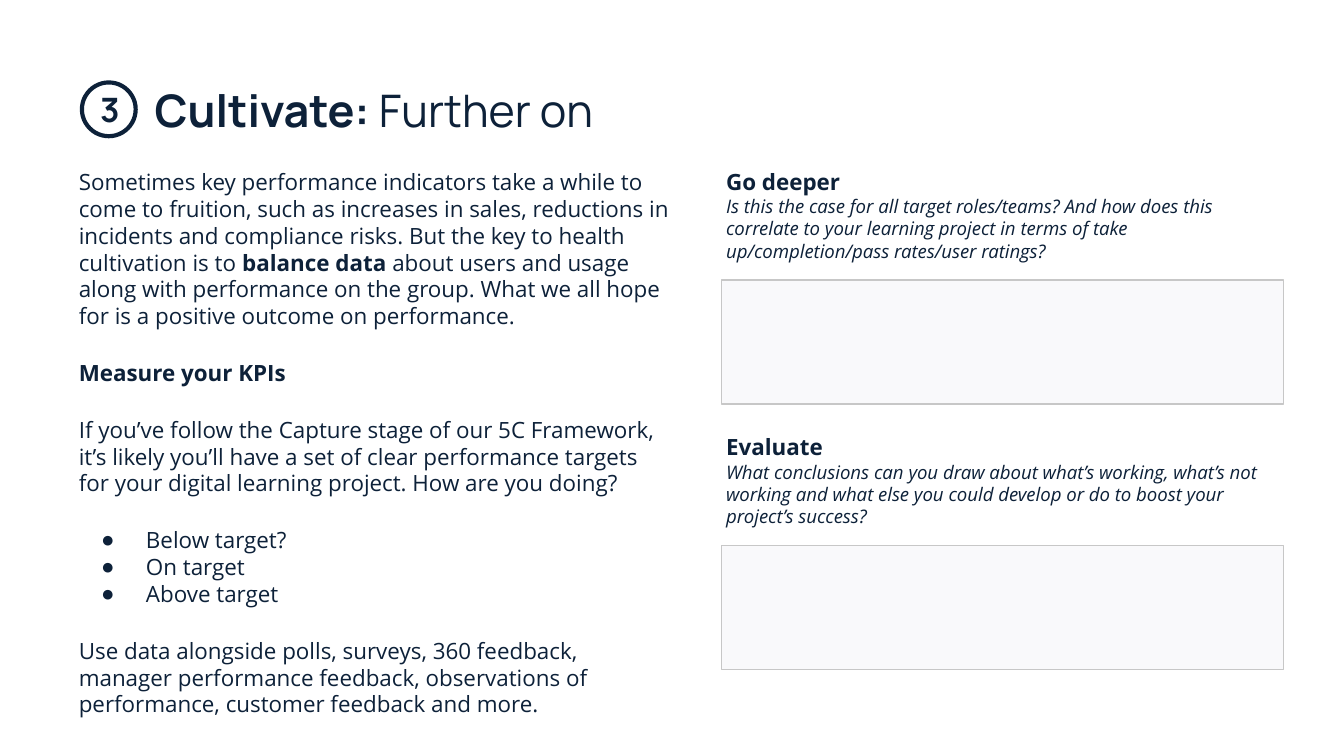
from dataclasses import dataclass

from lxml import etree
from pptx import Presentation
from pptx.dml.color import RGBColor
from pptx.enum.shapes import MSO_SHAPE
from pptx.enum.text import MSO_ANCHOR, MSO_AUTO_SIZE, PP_ALIGN
from pptx.oxml.ns import qn
from pptx.util import Pt

NAVY = RGBColor(0x0D, 0x21, 0x39)
PALE = RGBColor(0xF9, 0xF9, 0xFB)
GREY = RGBColor(0xC7, 0xC7, 0xC7)
LEFT, CENTER = PP_ALIGN.LEFT, PP_ALIGN.CENTER
TOP = MSO_ANCHOR.TOP
NO_AUTOFIT = MSO_AUTO_SIZE.NONE
OVAL, RECTANGLE = MSO_SHAPE.OVAL, MSO_SHAPE.RECTANGLE
HEADING_FONT, BODY_FONT, BULLET_FONT = "Manrope", "Open Sans", "Arial"
BULLET_MARGIN, BULLET_HANG = Pt(36), Pt(24)


@dataclass(frozen=True)
class Box:
    left: float
    top: float
    width: float
    height: float


@dataclass(frozen=True)
class Run:
    text: str
    bold: bool = False
    italic: bool = False
    size: float | None = None
    break_after: bool = False


@dataclass(frozen=True)
class Paragraph:
    runs: tuple[Run, ...]
    before: float = 0
    after: float = 0
    bullet: bool = False


@dataclass(frozen=True)
class Prompt:
    top: float
    heading: str
    question: str


BODY = (
    Paragraph((
        Run("Sometimes key performance indicators take a while to come to fruition, "
            "such as increases in sales, reductions in incidents and compliance risks. "
            "But the key to health cultivation is to "),
        Run("balance data", bold=True),
        Run(" about users and usage along with performance on the group. "
            "What we all hope for is a positive outcome on performance."),
    )),
    Paragraph((Run("Measure your KPIs", bold=True),), before=16),
    Paragraph((Run("If you’ve follow the Capture stage of our 5C Framework, it’s likely "
                   "you’ll have a set of clear performance targets for your digital "
                   "learning project. How are you doing?"),), before=16),
    Paragraph((Run("Below target?"),), before=16, bullet=True),
    Paragraph((Run("On target"),), bullet=True),
    Paragraph((Run("Above target"),), bullet=True),
    Paragraph((Run("Use data alongside polls, surveys, 360 feedback, manager performance "
                   "feedback, observations of performance, customer feedback and more."),),
              before=16, after=16),
)

PROMPTS = (
    Prompt(82.8, "Go deeper",
           "Is this the case for all target roles/teams? And how does this correlate to "
           "your learning project in terms of take up/completion/pass rates/user ratings?"),
    Prompt(225, "Evaluate",
           "What conclusions can you draw about what’s working, what’s not working and "
           "what else you could develop or do to boost your project’s success?"),
)


def place(shape, box: Box) -> None:
    shape.left, shape.top = Pt(box.left), Pt(box.top)
    shape.width, shape.height = Pt(box.width), Pt(box.height)


def set_bullet(paragraph, bullet: bool) -> None:
    properties = paragraph._p.get_or_add_pPr()
    properties.set("marL", str(BULLET_MARGIN if bullet else 0))
    properties.set("indent", str(-BULLET_HANG if bullet else 0))
    if not bullet:
        etree.SubElement(properties, qn("a:buNone"))
        return
    color = etree.SubElement(properties, qn("a:buClr"))
    etree.SubElement(color, qn("a:srgbClr"), val=str(NAVY))
    etree.SubElement(properties, qn("a:buFont"), typeface=BULLET_FONT)
    etree.SubElement(properties, qn("a:buChar"), char="●")


def write_text(shape, paragraphs: tuple[Paragraph, ...], *, font: str, size: float,
               align=LEFT) -> None:
    frame = shape.text_frame
    frame.word_wrap = True
    frame.auto_size = NO_AUTOFIT
    frame.vertical_anchor = TOP
    frame.margin_left = frame.margin_right = Pt(7.2)
    frame.margin_top = frame.margin_bottom = Pt(7.2)
    for index, content in enumerate(paragraphs):
        paragraph = frame.add_paragraph() if index else frame.paragraphs[0]
        set_bullet(paragraph, content.bullet)
        paragraph.alignment = align
        paragraph.line_spacing = 1.0
        paragraph.space_before = Pt(content.before)
        paragraph.space_after = Pt(content.after)
        for part in content.runs:
            run = paragraph.add_run()
            run.text = part.text
            run.font.name = font
            run.font.size = Pt(part.size or size)
            run.font.bold = part.bold
            run.font.italic = part.italic
            run.font.color.rgb = NAVY
            if part.break_after:
                paragraph.add_line_break()


def add_text_box(slide, box: Box):
    return slide.shapes.add_textbox(Pt(box.left), Pt(box.top), Pt(box.width), Pt(box.height))


def add_outline(slide, kind, box: Box, line: RGBColor, weight: float,
                fill: RGBColor | None = None) -> None:
    shape = slide.shapes.add_shape(kind, Pt(box.left), Pt(box.top),
                                   Pt(box.width), Pt(box.height))
    shape.shadow.inherit = False
    shape.line.color.rgb = line
    shape.line.width = Pt(weight)
    if fill is None:
        shape.fill.background()
    else:
        shape.fill.solid()
        shape.fill.fore_color.rgb = fill


def add_prompt(slide, prompt: Prompt) -> None:
    label = add_text_box(slide, Box(381.9, prompt.top, 315.4, 66.2))
    runs = (Run(prompt.heading, bold=True, break_after=True),
            Run(prompt.question, italic=True, size=10))
    write_text(label, (Paragraph(runs),), font=BODY_FONT, size=12)
    add_outline(slide, RECTANGLE, Box(386.6, prompt.top + 67.2, 301, 66.4), GREY, 0.75, PALE)


def main() -> None:
    presentation = Presentation()
    presentation.slide_width, presentation.slide_height = Pt(720), Pt(405)
    slide = presentation.slides.add_slide(presentation.slide_layouts[1])

    title = slide.shapes.title
    place(title, Box(75.6, 37, 440, 44))
    write_text(title, (Paragraph((Run("Cultivate: ", bold=True), Run("Further on"))),),
               font=HEADING_FONT, size=24)

    add_outline(slide, OVAL, Box(43.9, 44.2, 28.8, 28.8), NAVY, 2.25)
    number = add_text_box(slide, Box(46.5, 40.3, 22.6, 28.8))
    write_text(number, (Paragraph((Run("3", bold=True),)),),
               font=HEADING_FONT, size=18, align=CENTER)

    body = slide.placeholders[1]
    place(body, Box(35, 82.8, 333.4, 301.7))
    write_text(body, BODY, font=BODY_FONT, size=12)

    for prompt in PROMPTS:
        add_prompt(slide, prompt)

    presentation.save("out.pptx")


if __name__ == "__main__":
    main()
